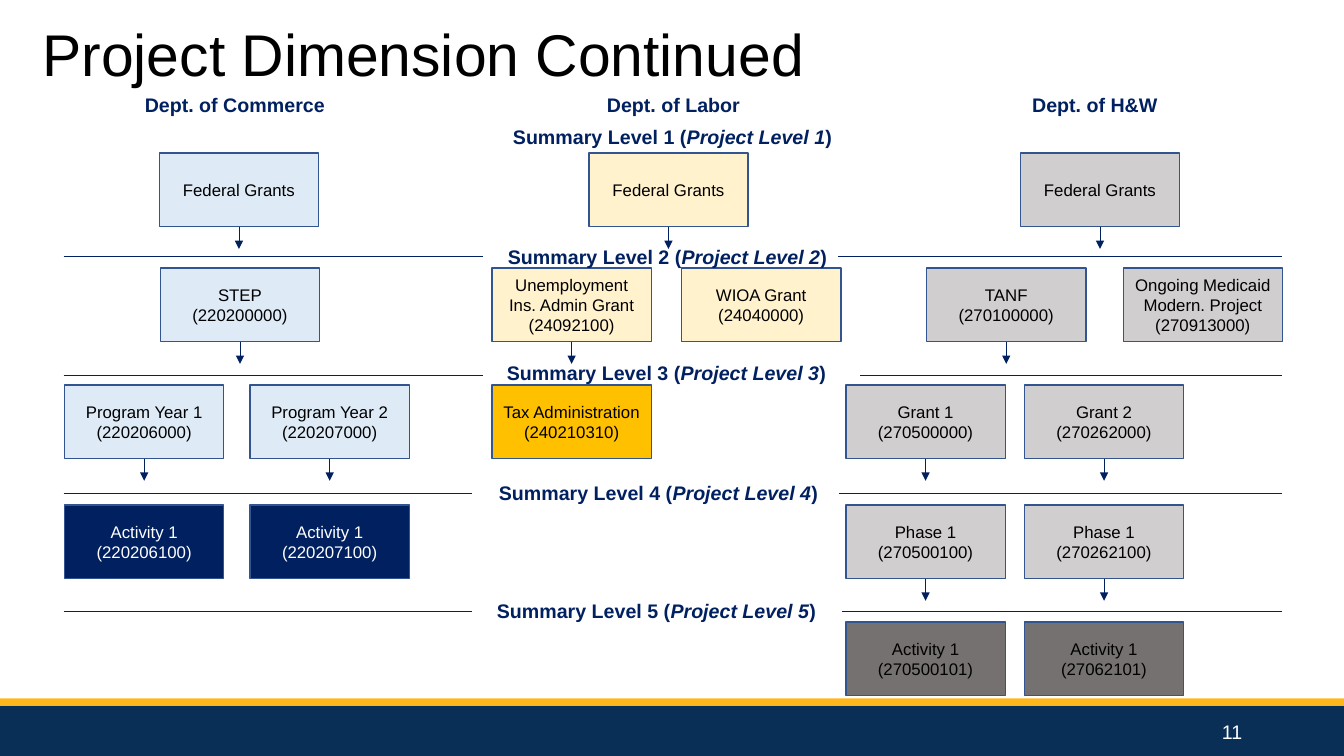
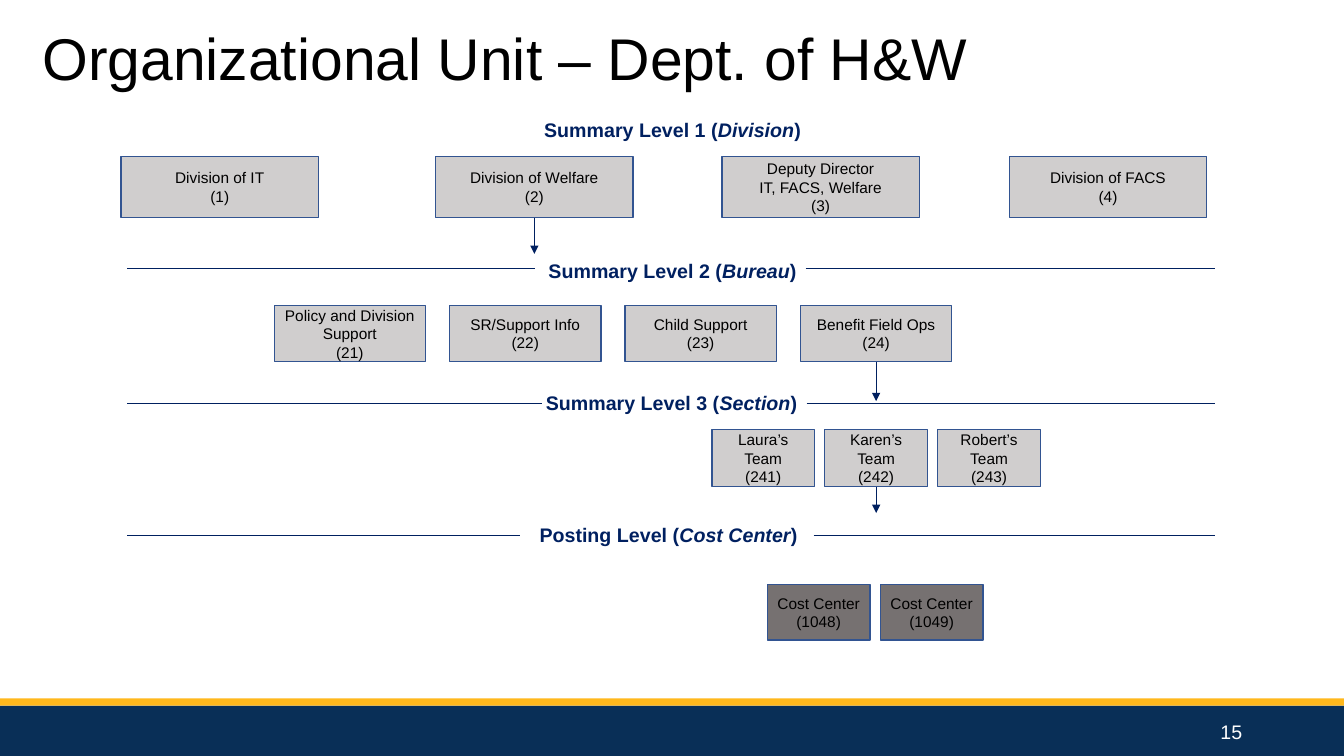
from lxml.etree import SubElement
from pptx import Presentation
from pptx.dml.color import RGBColor
from pptx.enum.shapes import MSO_CONNECTOR, MSO_SHAPE
from pptx.enum.text import MSO_ANCHOR, MSO_AUTO_SIZE, PP_ALIGN
from pptx.oxml.ns import qn
from pptx.util import Inches, Pt

FONT = "Arial"
BLACK, WHITE = "000000", "FFFFFF"
NAVY, OUTLINE = "002060", "325491"
BAND_NAVY, BAND_GOLD = "092F57", "FFB81C"
BLUE, CREAM, AMBER = "DEEBF7", "FFF2CC", "FFC000"
GRAY, DARK_GRAY = "D0CECE", "767171"
SLIDE_WIDTH, SLIDE_HEIGHT = 13.33, 7.5

PROJECT_ROWS = [
    (1.52, [(1.58, "Federal Grants", BLUE, 0.22),
            (5.84, "Federal Grants", CREAM, 0.22),
            (10.12, "Federal Grants", GRAY, 0.22)]),
    (2.66, [(1.59, "STEP\n(220200000)", BLUE, 0.22),
            (4.88, "Unemployment Ins. Admin Grant\n(24092100)", CREAM, 0.22),
            (6.76, "WIOA Grant\n(24040000)", CREAM, 0),
            (9.19, "TANF\n(270100000)", GRAY, 0.22),
            (11.14, "Ongoing Medicaid Modern. Project\n(270913000)", GRAY, 0)]),
    (3.82, [(0.64, "Program Year 1\n(220206000)", BLUE, 0.22),
            (2.48, "Program Year 2\n(220207000)", BLUE, 0.22),
            (4.88, "Tax Administration\n(240210310)", AMBER, 0),
            (8.39, "Grant 1\n(270500000)", GRAY, 0.22),
            (10.16, "Grant 2\n(270262000)", GRAY, 0.22)]),
    (5.01, [(0.64, "Activity 1\n(220206100)", NAVY, 0),
            (2.48, "Activity 1\n(220207100)", NAVY, 0),
            (8.39, "Phase 1\n(270500100)", GRAY, 0.22),
            (10.16, "Phase 1\n(270262100)", GRAY, 0.22)]),
    (6.17, [(8.39, "Activity 1\n(270500101)", DARK_GRAY, 0),
            (10.16, "Activity 1\n(27062101)", DARK_GRAY, 0)]),
]
PROJECT_DIVIDERS = [(2.54, 4.79, 8.31), (3.72, 4.79, 8.53),
                    (4.89, 4.68, 8.32), (6.07, 4.68, 8.35)]
PROJECT_LABELS = [(6.67, 1.19), (6.62, 2.38), (6.61, 3.53), (6.53, 4.72), (6.51, 5.89)]
DEPARTMENTS = [(2.33, "Dept. of Commerce"), (6.68, "Dept. of Labor"), (10.86, "Dept. of H&W")]

UNIT_ROWS = [
    (1.55, 1.96, 0.61, GRAY, [1.2, 4.32, 7.16, 10.01],
     [("Division of IT\n(1)", 0), ("Division of Welfare\n(2)", 0.36),
      ("Deputy Director\nIT, FACS, Welfare\n(3)", 0), ("Division of FACS\n(4)", 0)]),
    (3.03, 1.5, 0.56, GRAY, [2.72 + 1.74 * step for step in range(4)],
     [("Policy and Division Support\n(21)", 0), ("SR/Support Info\n(22)", 0),
      ("Child Support\n(23)", 0), ("Benefit Field Ops\n(24)", 0.39)]),
    (4.26, 1.02, 0.57, GRAY, [7.06 + 1.12 * step for step in range(3)],
     [("Laura’s Team\n(241)", 0), ("Karen’s Team\n(242)", 0.26), ("Robert’s Team\n(243)", 0)]),
    (5.8, 1.02, 0.55, DARK_GRAY, [7.61 + 1.12 * step for step in range(2)],
     [("Cost Center (1048)", 0), ("Cost Center (1049)", 0)]),
]
UNIT_DIVIDERS = [(2.66, 5.31, 7.99), (4, 5.38, 8), (5.31, 5.16, 8.07)]
UNIT_LABELS = [(6.67, 1.12, "Summary Level 1", "Division"),
               (6.67, 2.52, "Summary Level 2", "Bureau"),
               (6.66, 3.83, "Summary Level 3", "Section"),
               (6.63, 5.14, "Posting Level", "Cost Center")]


def color(value):
    """Turn a hex string into a colour."""
    return RGBColor.from_string(value)


def format_text(frame, size, fill, align, bold=False):
    """Give every run in a frame the same font, and every paragraph one alignment."""
    frame.word_wrap = True
    for para in frame.paragraphs:
        para.alignment = align
        for span in para.runs:
            span.font.name = FONT
            span.font.size = Pt(size)
            span.font.bold = bold
            span.font.color.rgb = color(fill)


def add_rectangle(page, left, top, width, height, fill):
    """Add a plain filled rectangle."""
    box = page.shapes.add_shape(MSO_SHAPE.RECTANGLE, Inches(left), Inches(top),
                                Inches(width), Inches(height))
    box.shadow.inherit = False
    box.fill.solid()
    box.fill.fore_color.rgb = color(fill)
    box.line.fill.background()
    return box


def add_line(page, start, end, arrow=False):
    """Add a thin navy line, with an arrowhead at its end if asked."""
    line = page.shapes.add_connector(MSO_CONNECTOR.STRAIGHT, *map(Inches, start + end))
    line.line.color.rgb = color(NAVY)
    line.line.width = Pt(0.5)
    if arrow:
        SubElement(line.line._get_or_add_ln(), qn("a:tailEnd"), type="triangle")
    SubElement(line.element.spPr, qn("a:effectLst"))


def add_unit(page, left, top, width, height, text, fill, size, arrow_length):
    """Add an outlined chart box and the arrow below it, if any."""
    box = add_rectangle(page, left, top, width, height, fill)
    box.line.color.rgb = color(OUTLINE)
    box.line.width = Pt(1)
    frame = box.text_frame
    frame.text = text
    frame.vertical_anchor = MSO_ANCHOR.MIDDLE
    frame.margin_left = frame.margin_right = Inches(0.08)
    format_text(frame, size, WHITE if fill == NAVY else BLACK, PP_ALIGN.CENTER)
    if arrow_length:
        center, bottom = left + width / 2, top + height
        add_line(page, (center, bottom), (center, bottom + arrow_length), arrow=True)


def add_label(page, center, top, text, detail=""):
    """Add a bold centred label, with an italic detail in brackets if given."""
    width = 4
    box = page.shapes.add_textbox(Inches(center - width / 2), Inches(top),
                                  Inches(width), Inches(0.34))
    para = box.text_frame.paragraphs[0]
    para.text = f"{text} (" if detail else text
    if detail:
        for part in (detail, ")"):
            para.add_run().text = part
        para.runs[1].font.italic = True
    format_text(box.text_frame, 14, NAVY, PP_ALIGN.CENTER, bold=True)


def add_dividers(page, dividers, left, right):
    """Add the level lines, each leaving a gap for its label."""
    for top, gap_start, gap_end in dividers:
        add_line(page, (left, top), (gap_start, top))
        add_line(page, (gap_end, top), (right, top))


def add_page(deck, layout, title, title_top, number):
    """Add a slide with its title and slide number."""
    page = deck.slides.add_slide(layout)
    heading = page.shapes.title
    heading.left, heading.top = Inches(0.32), Inches(title_top)
    heading.width, heading.height = Inches(11.94), Inches(0.81)
    frame = heading.text_frame
    frame.text = title
    frame.auto_size = MSO_AUTO_SIZE.NONE
    frame.vertical_anchor = MSO_ANCHOR.BOTTOM
    format_text(frame, 42, BLACK, PP_ALIGN.LEFT)
    box = page.shapes.add_textbox(Inches(9.42), Inches(7.06), Inches(3), Inches(0.4))
    box.text_frame.text = number
    box.text_frame.vertical_anchor = MSO_ANCHOR.MIDDLE
    format_text(box.text_frame, 14, WHITE, PP_ALIGN.RIGHT)
    return page


def style_layout(layout, page):
    """Keep only the layout's title and move the footer bands into the layout."""
    for placeholder in list(layout.placeholders):
        if placeholder.placeholder_format.idx:
            layout.shapes.element.remove(placeholder.element)
    for top, height, fill in ((7, 0.5, BAND_NAVY), (6.93, 0.07, BAND_GOLD)):
        band = add_rectangle(page, 0, top, SLIDE_WIDTH, height, fill)
        layout.shapes.element.append(band.element)


def fill_project_page(page):
    """Draw the project levels of the three departments."""
    for top, units in PROJECT_ROWS:
        for left, text, fill, arrow_length in units:
            add_unit(page, left, top, 1.58, 0.73, text, fill, 12, arrow_length)
    add_dividers(page, PROJECT_DIVIDERS, 0.63, 12.72)
    for center, department in DEPARTMENTS:
        add_label(page, center, 0.87, department)
    for level, (center, top) in enumerate(PROJECT_LABELS, 1):
        add_label(page, center, top, f"Summary Level {level}", f"Project Level {level}")


def fill_unit_page(page):
    """Draw the divisions, bureaus, sections and cost centers."""
    for top, width, height, fill, lefts, units in UNIT_ROWS:
        for left, (text, arrow_length) in zip(lefts, units):
            add_unit(page, left, top, width, height, text, fill, 11, arrow_length)
    add_dividers(page, UNIT_DIVIDERS, 1.26, 12.05)
    for label in UNIT_LABELS:
        add_label(page, *label)


def main():
    """Build and save the deck."""
    deck = Presentation()
    deck.slide_width, deck.slide_height = Inches(SLIDE_WIDTH), Inches(SLIDE_HEIGHT)
    layout = deck.slide_layouts.get_by_name("Title Only")
    project_page = add_page(deck, layout, "Project Dimension Continued", 0.12, "11")
    style_layout(layout, project_page)
    fill_project_page(project_page)
    unit_page = add_page(deck, layout, "Organizational Unit – Dept. of H&W", 0.16, "15")
    fill_unit_page(unit_page)
    deck.save("out.pptx")


if __name__ == "__main__":
    main()
